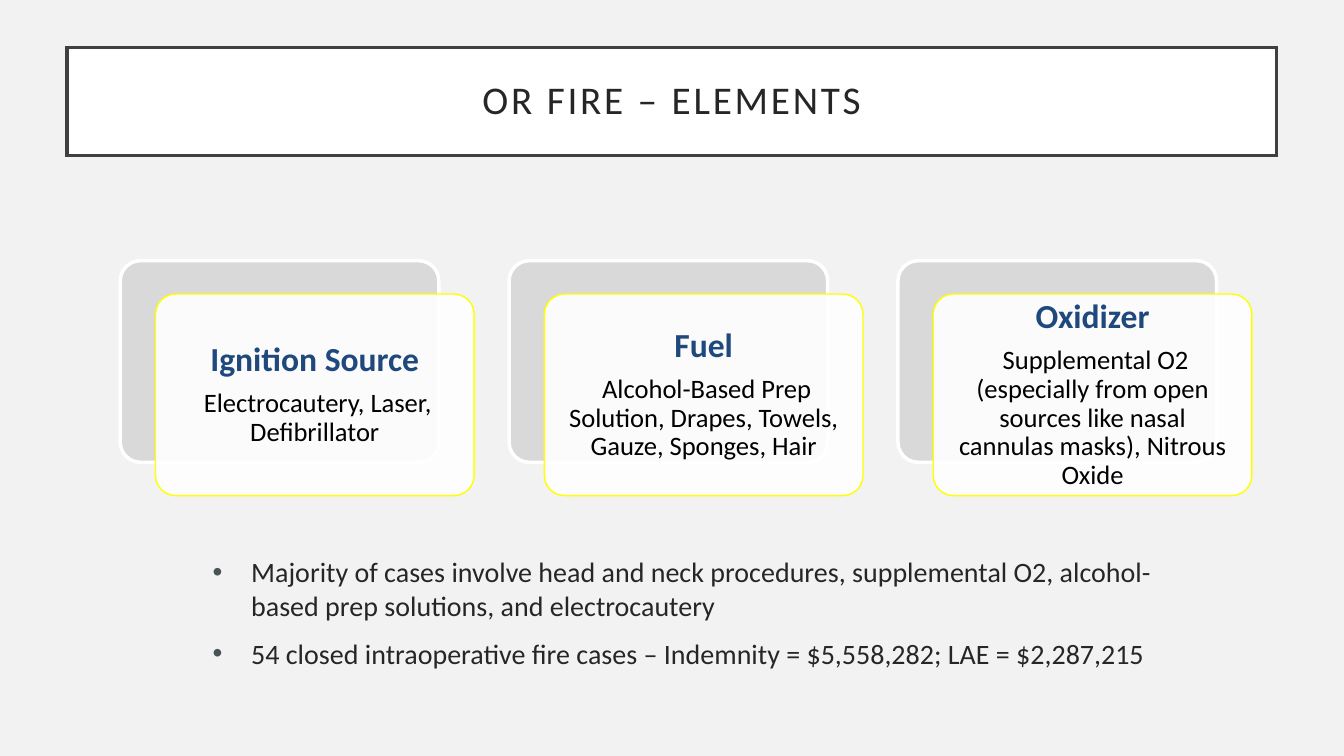
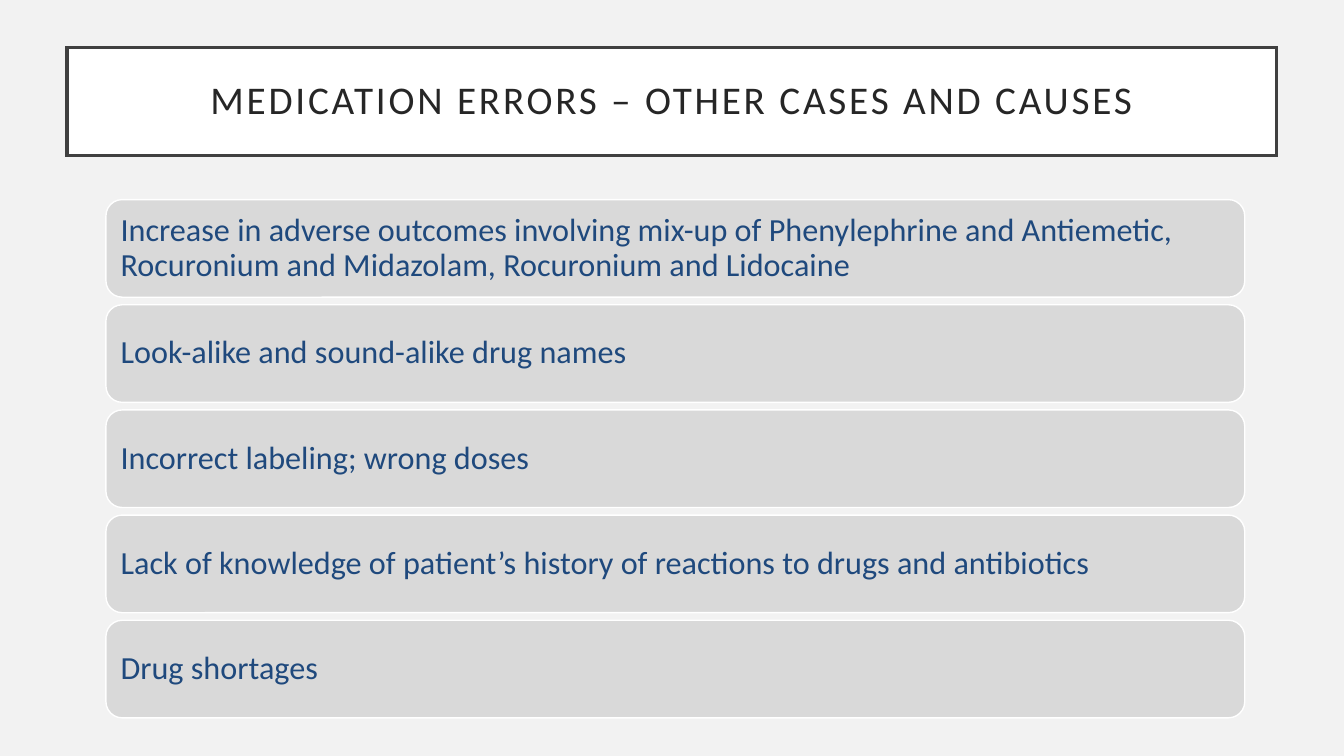
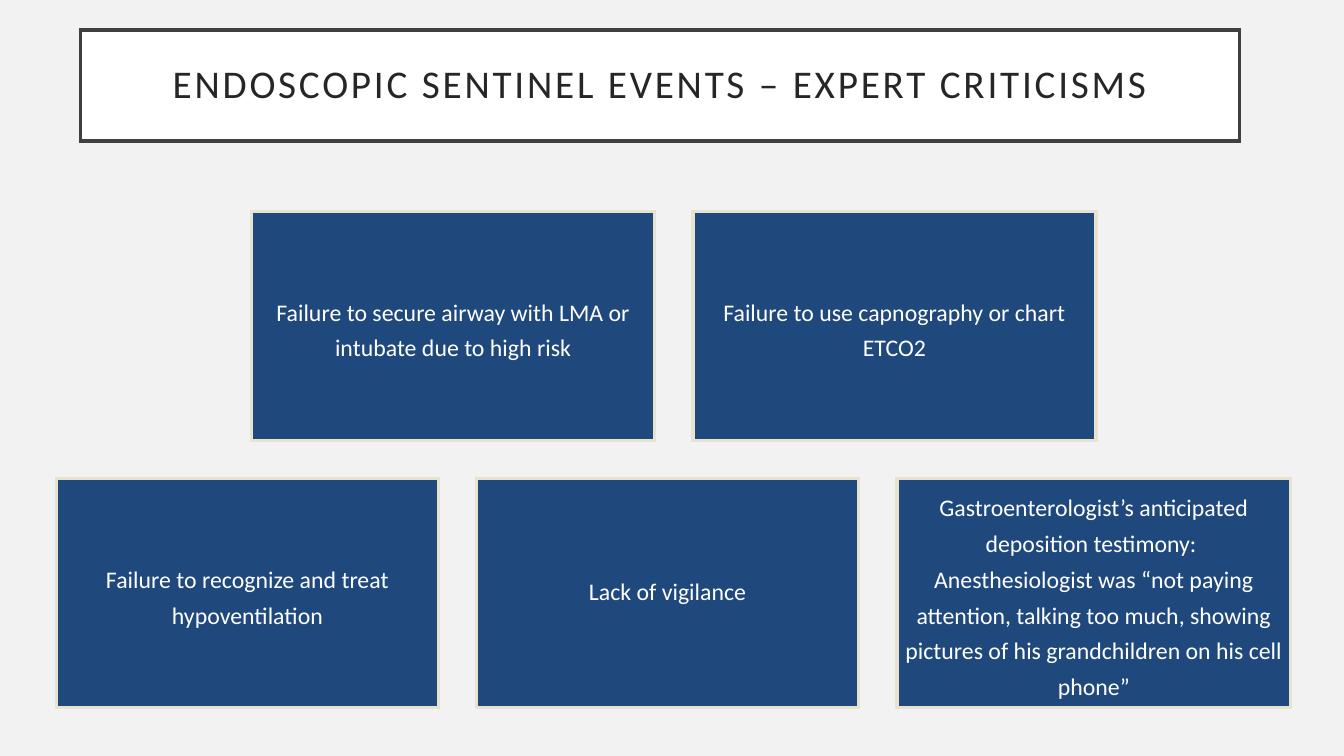
"""Build three slides on operating-room risk: fire, medication errors and endoscopy."""
from lxml import etree
from pptx import Presentation
from pptx.dml.color import RGBColor
from pptx.enum.shapes import MSO_SHAPE as Preset
from pptx.enum.text import MSO_ANCHOR as Anchor, MSO_AUTO_SIZE as AutoSize, PP_ALIGN as Align
from pptx.oxml.ns import qn
from pptx.util import Cm, Pt

COLORS = {
    "page": "F2F2F2", "white": "FFFFFF", "frame": "404040", "ink": "262626",
    "gray": "D9D9D9", "yellow": "FFFF00", "navy": "1F497D", "black": "000000",
    "sand": "E8E3CE", "bullet": "4A5356",
}
FONT = "Calibri"
TITLE_BOX = (1.69, 1.2, 30.48, 2.72)
WIDE_TITLE_BOX = (2.03, 0.76, 29.21, 2.79)

FIRE_TITLE = "OR FIRE – ELEMENTS"
FIRE_ELEMENTS = [
    ("Ignition Source", " Electrocautery, Laser, Defibrillator"),
    ("Fuel", " Alcohol-Based Prep Solution, Drapes, Towels, Gauze, Sponges, Hair"),
    ("Oxidizer", " Supplemental O2 (especially from open sources like nasal cannulas masks), "
                 "Nitrous Oxide"),
]
FIRE_FACTS = [
    "Majority of cases involve head and neck procedures, supplemental O2, "
    "alcohol-based prep solutions, and electrocautery",
    "54 closed intraoperative fire cases – Indemnity = $5,558,282; LAE = $2,287,215",
]
ERRORS_TITLE = "MEDICATION ERRORS – OTHER CASES AND CAUSES"
ERROR_CAUSES = [
    "Increase in adverse outcomes involving mix-up of Phenylephrine and Antiemetic, "
    "Rocuronium and Midazolam, Rocuronium and Lidocaine",
    "Look-alike and sound-alike drug names",
    "Incorrect labeling; wrong doses",
    "Lack of knowledge of patient’s history of reactions to drugs and antibiotics",
    "Drug shortages",
]
ENDOSCOPY_TITLE = "ENDOSCOPIC SENTINEL EVENTS – EXPERT CRITICISMS"
CRITICISM_ROWS = [
    (6.34, [
        (10.16, "Failure to secure airway with LMA or intubate due to high risk"),
        (10.16, "Failure to use capnography or chart ETCO2"),
    ]),
    (1.42, [
        (9.63, "Failure to recognize and treat hypoventilation"),
        (9.63, "Lack of vigilance"),
        (9.93, "Gastroenterologist’s anticipated deposition testimony:  Anesthesiologist was "
               "“not paying attention, talking too much, showing pictures of his "
               "grandchildren on his cell phone”"),
    ]),
]


def rgb(name):
    """Return the named colour."""
    return RGBColor.from_string(COLORS[name])


def add_text(shape, text, size, color, bold=False, align=Align.LEFT, leading=0.9,
             before=0, after=0, inset=0.25, tracking=0, bullet=False, extra=False):
    """Write one formatted paragraph, after the present text if extra is set."""
    frame = shape.text_frame
    frame.word_wrap = True
    frame.auto_size = AutoSize.NONE
    frame.vertical_anchor = Anchor.MIDDLE
    frame.margin_left = frame.margin_right = Cm(inset)
    frame.margin_top = frame.margin_bottom = Cm(inset)
    paragraph = frame.add_paragraph() if extra else frame.paragraphs[0]
    paragraph.alignment = align
    paragraph.line_spacing = leading
    paragraph.space_before, paragraph.space_after = Pt(before), Pt(after)
    run = paragraph.add_run()
    run.text = text
    font = run.font
    font.name, font.size, font.bold = FONT, Pt(size), bold
    font.color.rgb = rgb(color)
    if tracking:
        font._element.set("spc", str(tracking * 100))
    if bullet:
        props = paragraph._p.get_or_add_pPr()
        props.set("marL", str(Cm(0.97)))
        props.set("indent", str(-Cm(0.97)))
        bullet_color = etree.SubElement(props, qn("a:buClr"))
        etree.SubElement(bullet_color, qn("a:srgbClr"), val=COLORS["bullet"])
        etree.SubElement(props, qn("a:buFont"), typeface="Arial")
        etree.SubElement(props, qn("a:buChar"), char="•")


def paint(shape, fill, line, weight):
    """Give a shape a solid fill and an outline with sharp corners."""
    shape.fill.solid()
    shape.fill.fore_color.rgb = rgb(fill)
    shape.line.color.rgb = rgb(line)
    shape.line.width = Pt(weight)
    outline = shape._element.spPr.find(qn("a:ln"))
    etree.SubElement(outline, qn("a:miter"), lim="800000")


def add_panel(slide, preset, box, fill, line, weight, corner=None, opacity=None):
    """Add a preset shape without shadow."""
    panel = slide.shapes.add_shape(preset, *map(Cm, box))
    panel.shadow.inherit = False
    paint(panel, fill, line, weight)
    if corner is not None:
        panel.adjustments[0] = corner
    if opacity is not None:
        fill_color = panel._element.spPr.find(qn("a:solidFill"))[0]
        etree.SubElement(fill_color, qn("a:alpha"), val=str(opacity * 1000))
    return panel


def add_titled_slide(deck, text, box=TITLE_BOX):
    """Add a slide with the framed title."""
    slide = deck.slides.add_slide(deck.slide_layouts[5])
    title = slide.shapes.title
    title.left, title.top, title.width, title.height = map(Cm, box)
    paint(title, "white", "frame", 2.5)
    add_text(title, text, 28, "ink", align=Align.CENTER, inset=0.5, tracking=2)
    return slide


def build_fire(deck):
    """Three offset cards above two bulleted facts."""
    slide = add_titled_slide(deck, FIRE_TITLE)
    left, top, width, height, pitch = 3.03, 6.57, 8.03, 5.08, 9.8
    for index, (element, examples) in enumerate(FIRE_ELEMENTS):
        x = left + index * pitch
        add_panel(slide, Preset.ROUNDED_RECTANGLE, (x, top, width, height),
                  "gray", "white", 2.5, corner=0.1)
        card = add_panel(slide, Preset.ROUNDED_RECTANGLE, (x + 0.89, top + 0.84, width, height),
                         "white", "yellow", 1, corner=0.1, opacity=90)
        add_text(card, element, 24, "navy", bold=True, align=Align.CENTER, after=8)
        add_text(card, examples, 19, "black", align=Align.CENTER, extra=True)
    facts = slide.shapes.add_textbox(Cm(5.11), Cm(13.41), Cm(24.94), Cm(4.04))
    for index, fact in enumerate(FIRE_FACTS):
        add_text(facts, fact, 20, "ink", leading=1, before=10, bullet=True, extra=index > 0)


def build_errors(deck):
    """A stack of equal bars."""
    slide = add_titled_slide(deck, ERRORS_TITLE)
    for index, cause in enumerate(ERROR_CAUSES):
        bar = add_panel(slide, Preset.ROUNDED_RECTANGLE, (2.67, 5.03 + index * 2.65, 28.7, 2.46),
                        "gray", "white", 1)
        add_text(bar, cause, 23, "navy")


def build_endoscopy(deck):
    """Two rows of boxes with one gap throughout."""
    slide = add_titled_slide(deck, ENDOSCOPY_TITLE, WIDE_TITLE_BOX)
    top, height, gap = 5.33, 5.77, 0.96
    for row, (x, criticisms) in enumerate(CRITICISM_ROWS):
        for width, criticism in criticisms:
            box = add_panel(slide, Preset.RECTANGLE, (x, top + row * (height + gap), width, height),
                            "navy", "sand", 2.5)
            add_text(box, criticism, 17, "white", align=Align.CENTER, inset=0.17,
                     leading=0.9 if criticism == "Lack of vigilance" else 1.25)
            x += width + gap


def main():
    """Build and save the deck."""
    deck = Presentation()
    deck.slide_width, deck.slide_height = Cm(33.87), Cm(19.05)
    backdrop = deck.slide_master.background.fill
    backdrop.solid()
    backdrop.fore_color.rgb = rgb("page")
    for build in (build_fire, build_errors, build_endoscopy):
        build(deck)
    deck.save("out.pptx")


if __name__ == "__main__":
    main()
